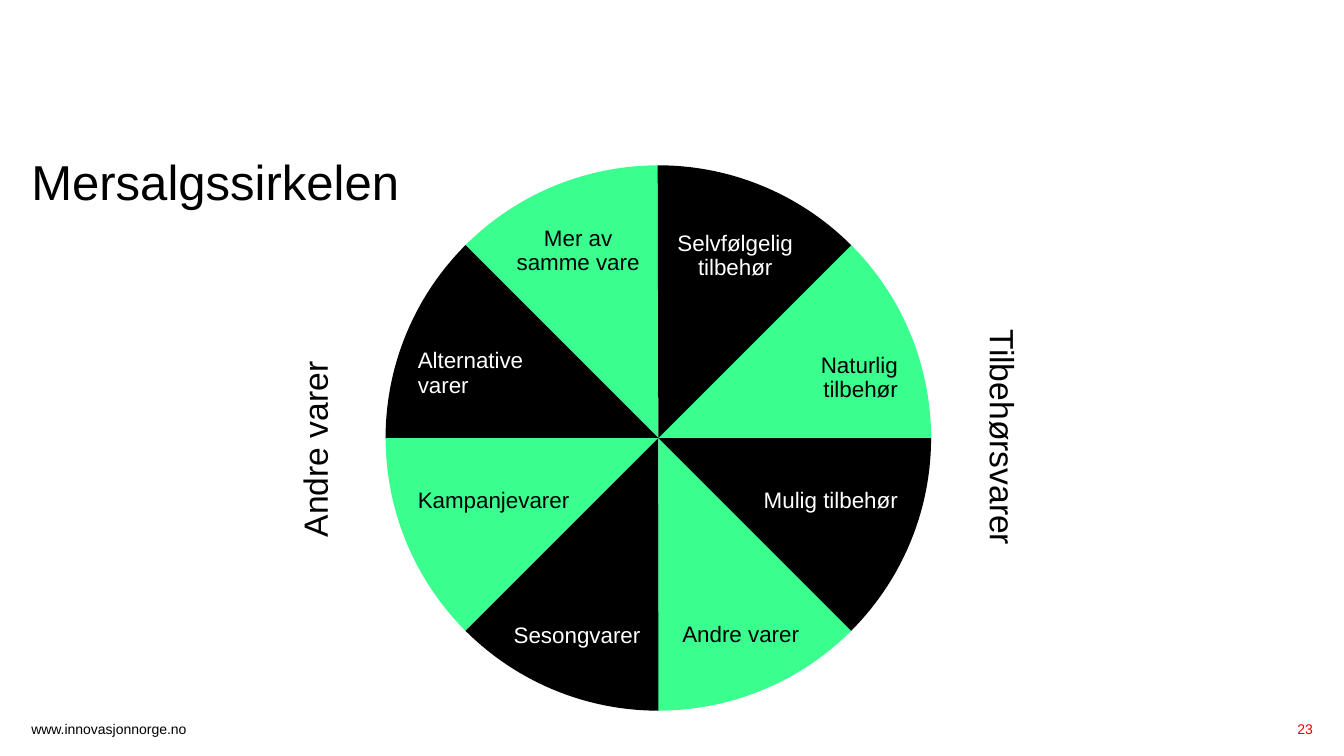
from dataclasses import dataclass

from pptx import Presentation
from pptx.dml.color import RGBColor
from pptx.enum.shapes import MSO_SHAPE as Preset
from pptx.enum.text import MSO_ANCHOR as Anchor, PP_ALIGN as Align
from pptx.util import Inches, Pt


@dataclass(frozen=True)
class Theme:
    """Colours, font and type sizes of the deck."""
    font: str = "Arial"
    black: str = "000000"
    white: str = "FFFFFF"
    green: str = "3AFF8F"
    red: str = "ED0000"
    title: int = 35
    caption: int = 24
    label: int = 16
    footer: int = 10


@dataclass(frozen=True)
class Box:
    """A rectangle in inches."""
    left: float
    top: float
    width: float
    height: float

    def inner(self, left, top, width, height):
        """Return an inner box given in percent of this one."""
        return Box(self.left + self.width * left / 100,
                   self.top + self.height * top / 100,
                   self.width * width / 100, self.height * height / 100)

    def lengths(self):
        """Return left, top, width and height as slide lengths."""
        return [Inches(n) for n in (self.left, self.top, self.width, self.height)]


THEME = Theme()
PAGE = Box(0, 0, 13.33, 7.5)
WEDGE_ANGLES = (134.92, 162)
WEDGE_COUNT = 8
LABELS = [
    ("Mer av samme vare", (22, 11.3, 26.6, 10.2), Align.CENTER, THEME.black),
    ("Selvfølgelig tilbehør", (50.8, 12.2, 26.6, 10.2), Align.CENTER, THEME.white),
    ("Sesongvarer", (21.8, 84.1, 26.6, 5.4), Align.CENTER, THEME.white),
    ("Andre varer", (51.8, 83.9, 26.6, 5.4), Align.CENTER, THEME.black),
    ("Kampanjevarer", (5.9, 59.3, 29, 6.1), Align.LEFT, THEME.black),
    ("Naturlig tilbehør", (67.3, 34.6, 26.6, 10.2), Align.RIGHT, THEME.black),
    ("Alternative varer", (5.9, 33.8, 26.6, 10.2), Align.LEFT, THEME.white),
    ("Mulig tilbehør", (67.3, 59.3, 26.6, 6.1), Align.RIGHT, THEME.white),
]
CAPTIONS = [
    ("Andre varer", (-34.6, 49.9, 41.8, 4.4), 270),
    ("Tilbehørsvarer", (93, 47.7, 41.8, 4.4), 90),
]


def add_text(slide, box, text, *, size, color=THEME.black, align=Align.LEFT,
             spacing=0.9, rotation=0):
    """Add a text box without margins."""
    shape = slide.shapes.add_textbox(*box.lengths())
    shape.rotation = rotation
    frame = shape.text_frame
    frame.word_wrap = True
    frame.vertical_anchor = Anchor.TOP
    frame.margin_left = frame.margin_right = frame.margin_top = frame.margin_bottom = 0
    para = frame.paragraphs[0]
    para.alignment = align
    para.line_spacing = spacing
    span = para.add_run()
    span.text = text
    span.font.name = THEME.font
    span.font.size = Pt(size)
    span.font.color.rgb = RGBColor.from_string(color)


def add_wedge(shapes, box, rotation, color):
    """Add one slice of the wheel."""
    wedge = shapes.add_shape(Preset.PIE, *box.lengths())
    wedge.adjustments[0], wedge.adjustments[1] = WEDGE_ANGLES
    wedge.rotation = rotation
    wedge.shadow.inherit = False
    wedge.fill.solid()
    wedge.fill.fore_color.rgb = RGBColor.from_string(color)
    wedge.line.fill.background()


def add_wheel(slide, box):
    """Add the sales wheel with its labels and side captions."""
    wheel = slide.shapes.add_group_shape()
    for index in range(WEDGE_COUNT):
        color = THEME.black if index % 2 else THEME.green
        add_wedge(wheel.shapes, box, -index * 360 / WEDGE_COUNT % 360, color)
    for text, place, align, color in LABELS:
        add_text(slide, box.inner(*place), text, size=THEME.label, color=color, align=align)
    for text, place, rotation in CAPTIONS:
        add_text(slide, box.inner(*place), text, size=THEME.caption,
                 align=Align.CENTER, rotation=rotation)


def add_footer(slide, box):
    """Add the web address and the page number."""
    add_text(slide, box.inner(0, 0, 22.4, 80), "www.innovasjonnorge.no",
             size=THEME.footer, spacing=1)
    add_text(slide, box.inner(91.5, 0, 8.5, 100), "23", size=THEME.footer,
             color=THEME.red, align=Align.RIGHT, spacing=1)


def add_wheel_slide(deck, page):
    """Add the slide with title, wheel and footer."""
    slide = deck.slides.add_slide(deck.slide_layouts[6])
    add_text(slide, page.inner(2.33, 20.93, 69.5, 18.8), "Mersalgssirkelen",
             size=THEME.title)
    add_footer(slide, page.inner(2.33, 95.33, 95.35, 3.2))
    add_wheel(slide, page.inner(28.69, 21.87, 40.59, 72.13))


def main():
    """Build and save the deck."""
    deck = Presentation()
    deck.slide_width, deck.slide_height = PAGE.lengths()[2:]
    add_wheel_slide(deck, PAGE)
    deck.save("out.pptx")


if __name__ == "__main__":
    main()
